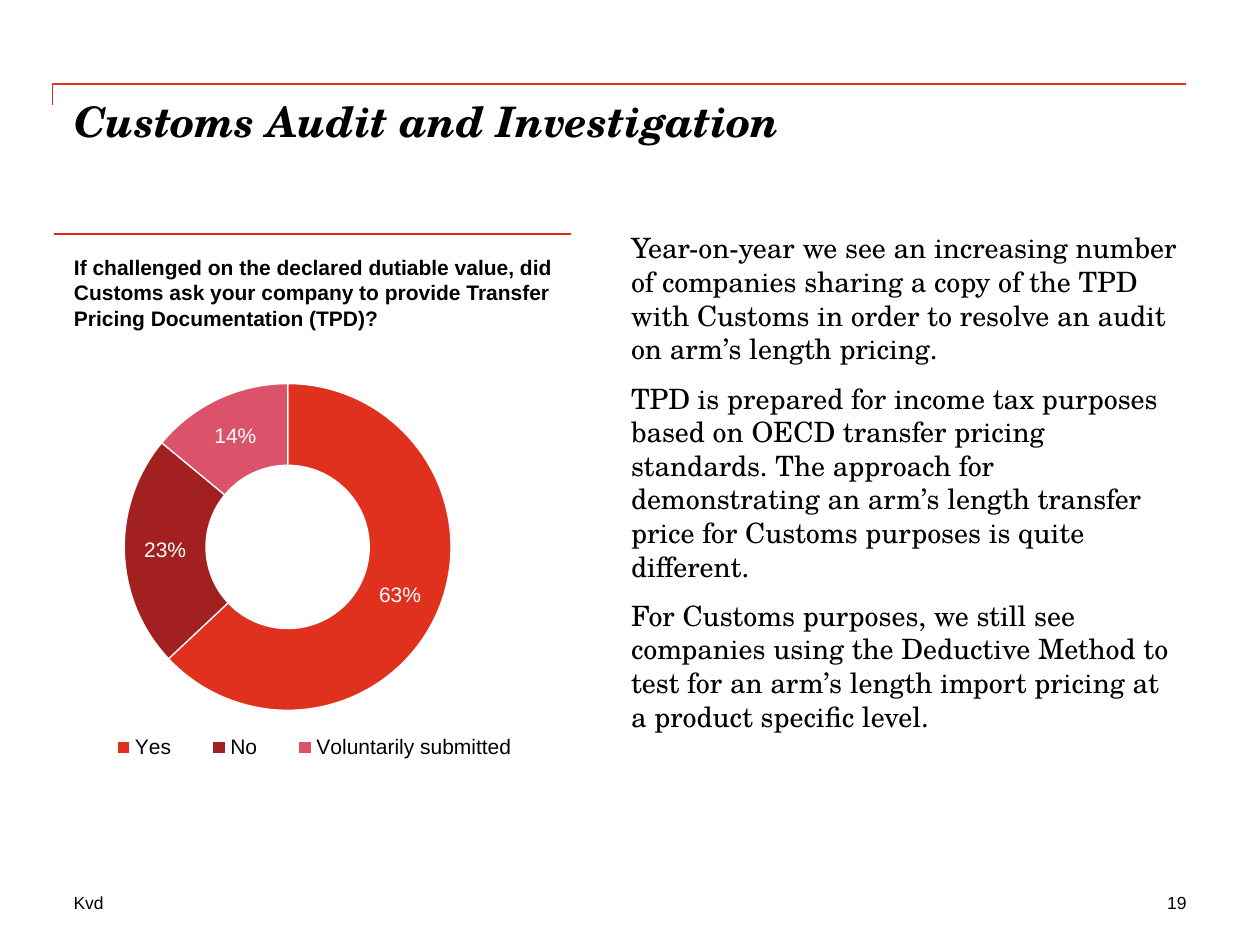
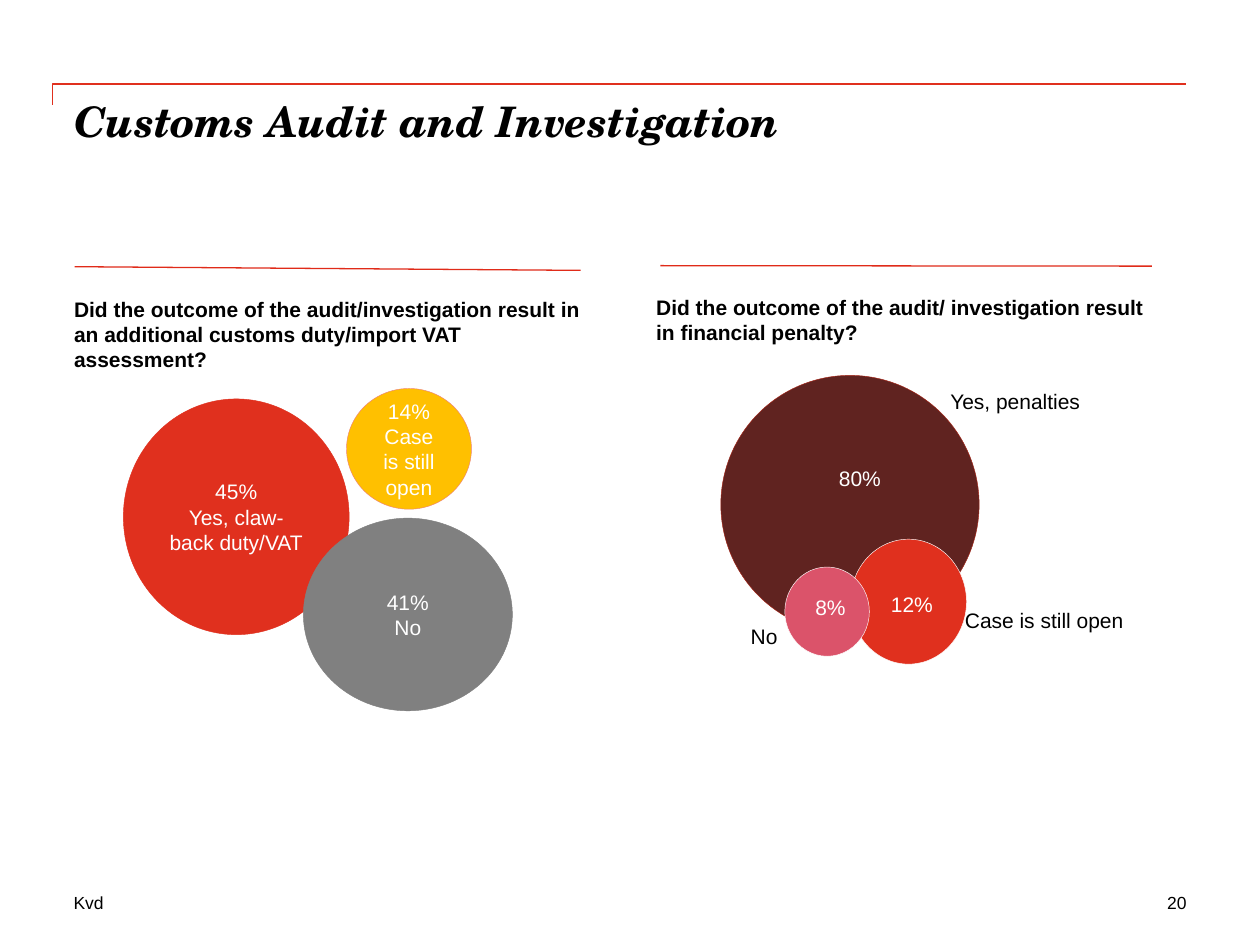
from dataclasses import dataclass
from lxml import etree
from pptx import Presentation
from pptx.chart.data import CategoryChartData
from pptx.dml.color import RGBColor
from pptx.enum.chart import XL_CHART_TYPE as Chart, XL_LEGEND_POSITION as LegendPos
from pptx.enum.shapes import MSO_CONNECTOR as Connector, MSO_SHAPE as Shape
from pptx.enum.text import MSO_ANCHOR as Anchor, PP_ALIGN as Align
from pptx.oxml import parse_xml
from pptx.oxml.ns import nsdecls, qn
from pptx.util import Inches, Pt


@dataclass(frozen=True)
class Theme:
    red: str = "E0301E"
    rule: str = "E02B19"
    crimson: str = "A32020"
    rose: str = "DB536A"
    maroon: str = "602320"
    maroon_edge: str = "A62416"
    amber: str = "FFC000"
    amber_edge: str = "ED8278"
    grey: str = "808080"
    black: str = "000000"
    white: str = "FFFFFF"
    sans: str = "Arial"
    serif: str = "TeX Gyre Schola"
    title: int = 24
    body: int = 16
    label: int = 12
    footer: int = 10
    gap: int = 9


COLS, ROWS = 120, 90
TITLE = "Customs Audit and Investigation"
FIRM = "Kvd"


def rgb(color):
    return RGBColor.from_string(color)


class Deck:
    def __init__(self, theme):
        self.theme = theme
        self.prs = Presentation()
        self.prs.slide_width, self.prs.slide_height = Inches(10), Inches(7.5)
        self.s = None

    def grid(self, x, y):
        return (round(self.prs.slide_width * x / COLS),
                round(self.prs.slide_height * y / ROWS))

    def box(self, x, y, w, h):
        return *self.grid(x, y), *self.grid(w, h)

    def slide(self, number):
        t = self.theme
        self.s = self.prs.slides.add_slide(self.prs.slide_layouts[6])
        self.corner_rule()
        self.text((7, 85, 34, 2), [FIRM], t.footer)
        self.text((93, 85, 20, 2), [str(number)], t.footer, align=Align.RIGHT)
        self.text((7.05, 9.1, 106, 12), [TITLE], t.title, font=t.serif,
                  bold=True, italic=True)

    def corner_rule(self):
        fb = self.s.shapes.build_freeform(*self.grid(5, 10))
        fb.add_line_segments([self.grid(5, 8), self.grid(113, 8)], close=False)
        sp = fb.convert_to_shape()
        sp.shadow.inherit = False
        sp.fill.background()
        self.stroke(sp.line, self.theme.red, 1)

    def stroke(self, line, color, width):
        line.color.rgb = rgb(color)
        line.width = Pt(width)

    def rule(self, start, end):
        sp = self.s.shapes.add_connector(Connector.STRAIGHT, *self.grid(*start), *self.grid(*end))
        self.stroke(sp.line, self.theme.rule, 0.75)
        etree.SubElement(sp._element.spPr, qn("a:effectLst"))

    def font(self, f, size, color=None, name=None, bold=False, italic=False):
        f.size, f.name = Pt(size), name or self.theme.sans
        f.bold, f.italic = bold, italic
        f.color.rgb = rgb(color or self.theme.black)

    def fill_text(self, tf, lines, size, align=Align.LEFT, after=0, **style):
        tf.word_wrap = True
        for i, line in enumerate(lines):
            p = tf.paragraphs[0] if i == 0 else tf.add_paragraph()
            p.alignment, p.space_after = align, Pt(after)
            r = p.add_run()
            r.text = line
            self.font(r.font, size, **style)

    def text(self, at, lines, size, align=Align.LEFT, after=0, font=None, **style):
        tf = self.s.shapes.add_textbox(*self.box(*at)).text_frame
        tf.margin_left = tf.margin_right = tf.margin_top = tf.margin_bottom = 0
        self.fill_text(tf, lines, size, align, after, name=font, **style)

    def question(self, at, line):
        self.text(at, [line], self.theme.label, bold=True)

    def bubble(self, at, fill, edge, lines=()):
        sp = self.s.shapes.add_shape(Shape.OVAL, *self.box(*at))
        sp.shadow.inherit = False
        sp.fill.solid()
        sp.fill.fore_color.rgb = rgb(fill)
        self.stroke(sp.line, edge, 0.25)
        sp.text_frame.vertical_anchor = Anchor.MIDDLE
        self.fill_text(sp.text_frame, lines, self.theme.label, Align.CENTER,
                       color=self.theme.white)

    def layout(self, parent, index, frame, inner=False):
        for old in parent.findall(qn("c:layout")):
            parent.remove(old)
        target = '<c:layoutTarget val="inner"/>' if inner else ""
        modes = "".join(f'<c:{k}Mode val="edge"/>' for k in "xy")
        sizes = "".join(f'<c:{k} val="{v}"/>' for k, v in zip("xywh", frame))
        parent.insert(index, parse_xml(
            f'<c:layout {nsdecls("c")}><c:manualLayout>{target}{modes}{sizes}'
            "</c:manualLayout></c:layout>"))

    def doughnut(self, at, shares, colors, plot_frame, legend_frame):
        t = self.theme
        data = CategoryChartData()
        data.categories = list(shares)
        data.add_series("Series 1", list(shares.values()))
        chart = self.s.shapes.add_chart(Chart.DOUGHNUT, *self.box(*at), data).chart
        chart.has_title = False
        self.font(chart.font, t.label)
        chart.has_legend = True
        legend = chart.legend
        legend.position, legend.include_in_layout = LegendPos.TOP, False
        self.font(legend.font, t.label)
        self.layout(legend._element, 1, legend_frame)
        plot = chart.plots[0]
        plot.vary_by_categories = True
        self.layout(plot._element.getparent(), 0, plot_frame, inner=True)
        plot.has_data_labels = True
        labels = plot.data_labels
        labels.show_percentage, labels.show_value = True, False
        labels.number_format, labels.number_format_is_linked = "0%", False
        self.font(labels.font, t.label, t.white)
        for i, color in enumerate(colors):
            fmt = plot.series[0].points[i].format
            fmt.fill.solid()
            fmt.fill.fore_color.rgb = rgb(color)
            self.stroke(fmt.line, t.white, 0.75)


def documentation_slide(deck):
    t = deck.theme
    deck.slide(19)
    deck.question((7.05, 24.25, 47.3, 8.5),
                  "If challenged on the declared dutiable value, did Customs ask your "
                  "company to provide Transfer Pricing Documentation (TPD)?")
    deck.doughnut((3.35, 26.3, 56.6, 63.7),
                  {"Yes": 63, "No": 23, "Voluntarily submitted": 14},
                  (t.red, t.crimson, t.rose),
                  (0.15, 0.16, 0.55, 0.49), (0.08, 0.67, 0.78, 0.07))
    deck.text((60.1, 22, 52, 58), [
        "Year-on-year we see an increasing number of companies sharing a copy of the TPD "
        "with Customs in order to resolve an audit on arm’s length pricing.",
        "TPD is prepared for income tax purposes based on OECD transfer pricing standards. "
        "The approach for demonstrating an arm’s length transfer price for Customs "
        "purposes is quite different.",
        "For Customs purposes, we still see companies using the Deductive Method to test "
        "for an arm’s length import pricing at a product specific level.",
    ], t.body, font=t.serif, after=t.gap)
    deck.rule((5.15, 22.3), (54.35, 22.3))


def outcome_slide(deck):
    t = deck.theme
    deck.slide(20)
    deck.rule((7.1, 25.4), (55.3, 25.75))
    deck.rule((62.9, 25.3), (109.7, 25.35))
    deck.question((7.05, 28.2, 49.1, 9.5),
                  "Did the outcome of the audit/investigation result in an additional "
                  "customs duty/import VAT assessment?")
    deck.question((62.5, 28, 47.3, 6.6),
                  "Did the outcome of the audit/ investigation result in financial penalty?")

    for at, fill, edge, lines in (
        ((11.75, 38, 21.5, 22.45), t.red, t.red, ["45%", "Yes, claw-back duty/VAT"]),
        ((33, 37, 11.9, 11.5), t.amber, t.amber_edge, ["14%", "Case is still open"]),
        ((28.9, 49.35, 19.9, 18.35), t.grey, t.grey, ["41%", "No"]),
        ((68.65, 35.75, 24.6, 24.6), t.maroon, t.maroon_edge, []),
        ((81, 51.35, 11.05, 11.9), t.red, t.white, []),
        ((74.75, 54, 8.05, 8.5), t.rose, t.white, []),
    ):
        deck.bubble(at, fill, edge, lines)

    for x, y, w, label, color in (
        (79.9, 44.3, 12, "80%", t.white),
        (84.85, 56.3, 12, "12%", t.white),
        (77.65, 56.65, 12, "8%", t.white),
        (90.5, 37, 16, "Yes, penalties", t.black),
        (91.9, 57.9, 18, "Case is still open", t.black),
        (71.5, 59.4, 4, "No", t.black),
    ):
        deck.text((x, y, w, 3), [label], t.label, color=color)


def main():
    deck = Deck(Theme())
    documentation_slide(deck)
    outcome_slide(deck)
    deck.prs.save("out.pptx")


if __name__ == "__main__":
    main()
